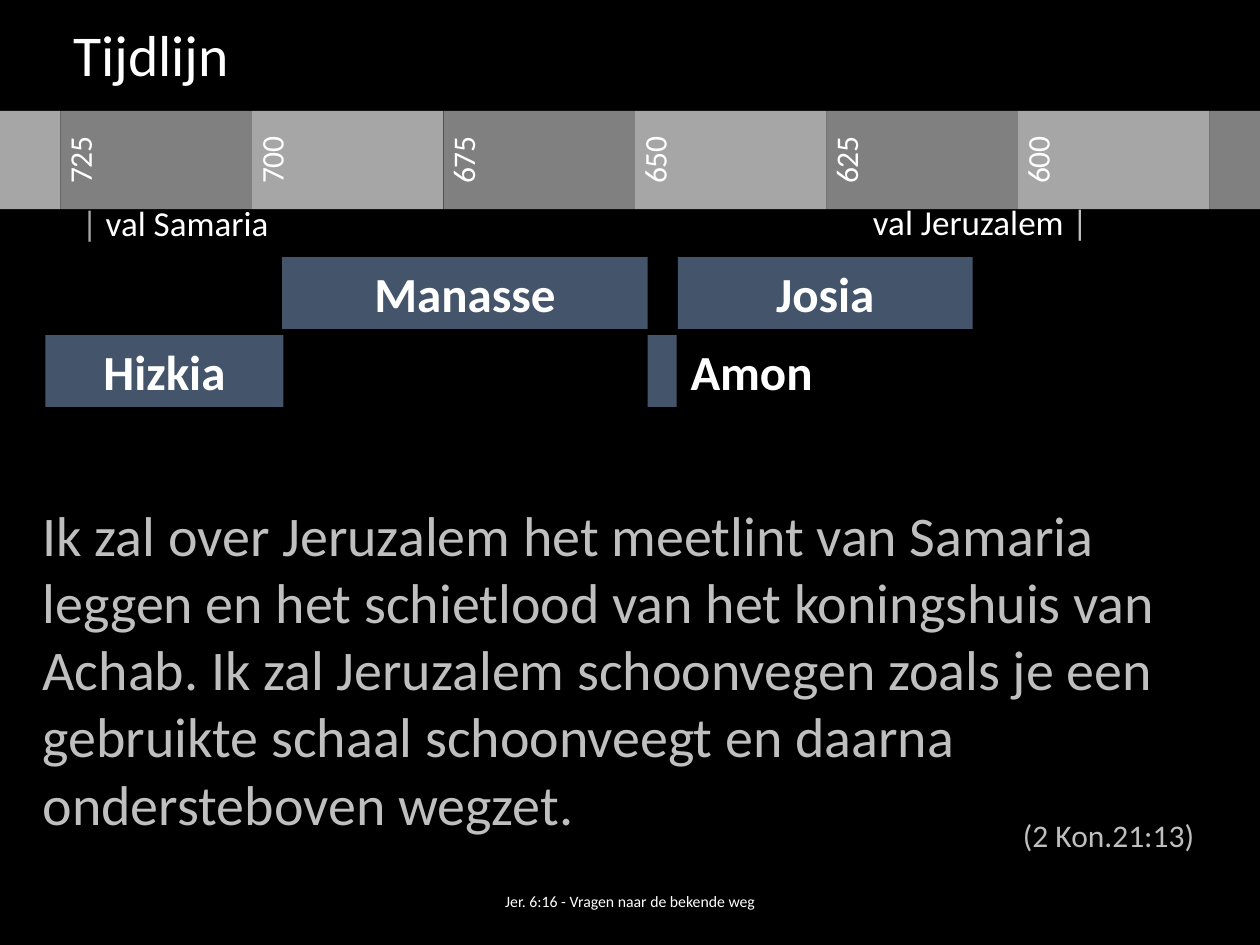
from dataclasses import dataclass

from pptx import Presentation
from pptx.dml.color import RGBColor
from pptx.enum.shapes import MSO_SHAPE
from pptx.enum.text import MSO_ANCHOR, MSO_AUTO_SIZE, PP_ALIGN
from pptx.util import Inches, Pt


@dataclass(frozen=True)
class Theme:
    font: str = "Calibri"
    back: str = "000000"
    white: str = "FFFFFF"
    light: str = "A6A6A6"
    dark: str = "808080"
    pale: str = "BFBFBF"
    king: str = "44546A"
    title: int = 33
    quote: int = 32
    name: int = 28
    event: int = 20
    small: int = 18
    foot: int = 9


def write(frame, text, size, color, font, bold=False, align=PP_ALIGN.LEFT,
          anchor=MSO_ANCHOR.TOP, wrap=True, space=None):
    frame.word_wrap = wrap
    frame.auto_size = MSO_AUTO_SIZE.NONE
    frame.vertical_anchor = anchor
    para = frame.paragraphs[0]
    para.alignment = align
    if space:
        para.line_spacing = space
    parts = [(text, color)] if isinstance(text, str) else text
    for words, tint in parts:
        run = para.add_run()
        run.text = words
        run.font.name = font
        run.font.size = Pt(size)
        run.font.bold = bold
        run.font.color.rgb = RGBColor.from_string(tint)


class Deck:
    def __init__(self, theme):
        self.theme = theme
        self.show = Presentation()
        self.show.slide_width = Inches(10)
        self.show.slide_height = Inches(7.5)
        self.slide = self.show.slides.add_slide(self.show.slide_layouts[5])
        fill = self.slide.background.fill
        fill.solid()
        fill.fore_color.rgb = RGBColor.from_string(theme.back)

    def title(self, text, left, top, width, height):
        shape = self.slide.shapes.title
        shape.left, shape.top = Inches(left), Inches(top)
        shape.width, shape.height = Inches(width), Inches(height)
        write(shape.text_frame, text, self.theme.title, self.theme.white,
              self.theme.font, space=0.9)

    def text(self, text, left, top, width, height, size, color=None, **form):
        box = self.slide.shapes.add_textbox(
            Inches(left), Inches(top), Inches(width), Inches(height))
        write(box.text_frame, text, size, color or self.theme.white,
              self.theme.font, **form)

    def block(self, left, top, width, height, color):
        shape = self.slide.shapes.add_shape(
            MSO_SHAPE.RECTANGLE,
            Inches(left), Inches(top), Inches(width), Inches(height))
        shape.shadow.inherit = False
        shape.fill.solid()
        shape.fill.fore_color.rgb = RGBColor.from_string(color)
        shape.line.fill.background()
        return shape

    def band(self, left, width, color, year=None):
        shape = self.block(left, 0.88, width, 0.78, color)
        if year:
            frame = shape.text_frame
            frame.margin_left = 0
            frame._txBody.bodyPr.set("vert", "vert270")
            write(frame, str(year), self.theme.small, self.theme.white,
                  self.theme.font, align=PP_ALIGN.CENTER)

    def king(self, left, top, width, name=None):
        shape = self.block(left, top, width, 0.57, self.theme.king)
        if name:
            write(shape.text_frame, name, self.theme.name, self.theme.white,
                  self.theme.font, bold=True, align=PP_ALIGN.CENTER)


def main():
    theme = Theme()
    deck = Deck(theme)
    deck.title("Tijdlijn", 0.48, 0.16, 8.62, 0.72)

    start, step = 0.48, 1.52
    deck.band(0, start, theme.light)
    for i, year in enumerate(range(725, 599, -25)):
        color = theme.light if i % 2 else theme.dark
        deck.band(start + i * step, step, color, year)
    deck.band(9.6, 0.4, theme.dark)

    high, low = 2.04, 2.66
    for left, top, width, name in (
        (0.36, low, 1.89, "Hizkia"),
        (2.24, high, 2.9, "Manasse"),
        (5.14, low, 0.23, None),
        (5.38, high, 2.34, "Josia"),
    ):
        deck.king(left, top, width, name)
    deck.text("Amon", 5.38, low, 1.17, 0.57, theme.name, bold=True,
              align=PP_ALIGN.CENTER)

    deck.text([("| ", theme.light), ("val Samaria", theme.white)],
              0.55, 1.55, 2.1, 0.44, theme.event)
    deck.text([("val Jeruzalem ", theme.white), ("|", theme.pale)],
              6.83, 1.54, 2.1, 0.44, theme.event)

    deck.text("Ik zal over Jeruzalem het meetlint van Samaria leggen en het "
              "schietlood van het koningshuis van Achab. Ik zal Jeruzalem "
              "schoonvegen zoals je een gebruikte schaal schoonveegt en "
              "daarna ondersteboven wegzet.",
              0.24, 3.92, 9.36, 2.79, theme.quote, theme.pale)
    deck.text("(2 Kon.21:13)", 8.02, 6.43, 1.58, 0.4, theme.small,
              theme.pale, wrap=False)
    deck.text("Jer. 6:16 - Vragen naar de bekende weg",
              3.31, 6.95, 3.38, 0.4, theme.foot,
              align=PP_ALIGN.CENTER, anchor=MSO_ANCHOR.MIDDLE)
    deck.show.save("out.pptx")


if __name__ == "__main__":
    main()
